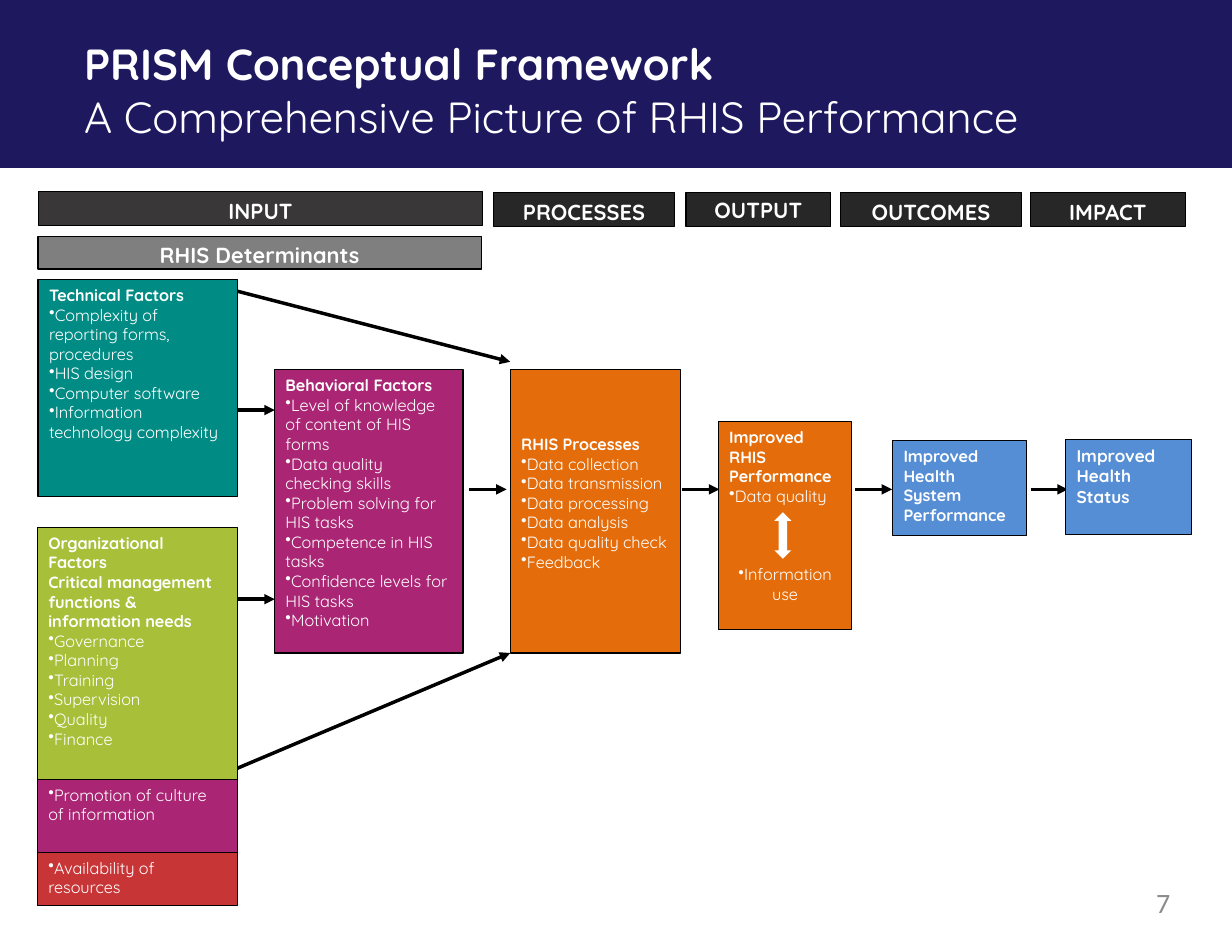
from lxml import etree
from pptx import Presentation
from pptx.dml.color import RGBColor
from pptx.enum import shapes, text
from pptx.oxml.ns import qn
from pptx.util import Pt

FONT = "Quicksand"
WHITE, BLACK, NAVY = "FFFFFF", "000000", "1E185F"
TEAL, MAGENTA, ORANGE = "008C84", "AA2573", "E46C0A"
BLUE, GREEN, RED = "558ED5", "A7BF39", "C83537"
LEFT, CENTER, RIGHT = text.PP_ALIGN.LEFT, text.PP_ALIGN.CENTER, text.PP_ALIGN.RIGHT


def color(value):
    return RGBColor.from_string(value)


def style(p, size, bold=False, fill=WHITE, font=FONT, align=LEFT):
    p.alignment = align
    p.font.size, p.font.name, p.font.bold = Pt(size), font, bold
    p.font.color.rgb = color(fill)


def add_bullet(p):
    pPr = p._p.get_or_add_pPr()
    pPr.set("marL", "0")
    pPr.set("indent", "0")
    bullet = etree.Element(qn("a:buChar"), char="•")
    pPr.insert_element_before(bullet, "a:tabLst", "a:defRPr", "a:extLst")


def add_block(s, box, fill, line=BLACK, kind=shapes.MSO_SHAPE.RECTANGLE):
    sp = s.shapes.add_shape(kind, *map(Pt, box))
    sp.shadow.inherit = False
    sp.fill.solid()
    sp.fill.fore_color.rgb = color(fill)
    if line:
        sp.line.color.rgb = color(line)
        sp.line.width = Pt(0.75)
    else:
        sp.line.fill.background()
    sp.text_frame.word_wrap = True
    sp.text_frame.vertical_anchor = text.MSO_ANCHOR.TOP
    return sp


def add_plain_text(s, box, lines, size, **look):
    tf = s.shapes.add_textbox(*map(Pt, box)).text_frame
    tf.word_wrap = True
    tf.margin_left = tf.margin_right = tf.margin_top = tf.margin_bottom = 0
    for i, (line, bold) in enumerate(lines):
        p = tf.paragraphs[0] if i == 0 else tf.add_paragraph()
        p.text = line
        style(p, size, bold, **look)


def add_header(s, box, label, fill="272727"):
    tf = add_block(s, box, fill).text_frame
    tf.text = label
    style(tf.paragraphs[0], 14, True, align=CENTER)
    return tf


def add_factor_box(s, box, fill, headings, items=(), size=10.5):
    """Filled box with bold headings above bulleted items."""
    tf = add_block(s, box, fill).text_frame
    for i, line in enumerate([*headings, *items]):
        p = tf.paragraphs[0] if i == 0 else tf.add_paragraph()
        p.text = line
        heading = i < len(headings)
        style(p, size, heading)
        if not heading:
            add_bullet(p)
    return tf


def add_arrow(s, x1, y1, x2, y2):
    c = s.shapes.add_connector(shapes.MSO_CONNECTOR.STRAIGHT, *map(Pt, (x1, y1, x2, y2)))
    c.line.color.rgb = color(BLACK)
    c.line.width = Pt(2.25)
    etree.SubElement(c.line._get_or_add_ln(), qn("a:tailEnd"), type="triangle")
    etree.SubElement(c._element.spPr, qn("a:effectLst"))


def title_band(s, box):
    left, top, width, height = box
    add_block(s, box, NAVY, line=None)
    add_plain_text(s, (left + 54, top + 24, 660, 68),
                   [("PRISM Conceptual Framework", True),
                    ("A Comprehensive Picture of RHIS Performance", False)], 28)


def stage_headers(s, left, top):
    add_header(s, (left, top - 0.7, 285, 21.6), "INPUT", "393737")
    add_header(s, (left - 0.5, top + 28, 285, 21), "RHIS Determinants", "7F7F7F")
    for x, width, label in [(292.5, 116, "PROCESSES"), (416, 93, "OUTPUT"),
                            (515.5, 116, "OUTCOMES"), (637.5, 99.5, "IMPACT")]:
        tf = add_header(s, (left + x, top, width, 21.6), label)
        if label == "OUTPUT":
            tf.vertical_anchor = text.MSO_ANCHOR.MIDDLE


def determinants(s, left, top):
    add_factor_box(s, (left + 0.5, top, 128, 139.5), TEAL, ["Technical Factors"],
                   ["Complexity of reporting forms, procedures", "HIS design",
                    "Computer software", "Information technology complexity"])
    add_factor_box(s, (left, top + 159.3, 128.8, 162), GREEN,
                   ["Organizational Factors",
                    "Critical management functions & information needs"],
                   ["Governance", "Planning", "Training", "Supervision", "Quality", "Finance"])
    add_factor_box(s, (left, top + 321.3, 128.8, 46.8), MAGENTA, [],
                   ["Promotion of culture of information"])
    add_factor_box(s, (left, top + 368.1, 128.8, 34), RED, [], ["Availability of resources"])
    add_factor_box(s, (left + 152.4, top + 58, 121.3, 182), MAGENTA, ["Behavioral Factors"],
                   ["Level of knowledge of content of HIS forms",
                    "Data quality checking skills", "Problem solving for HIS tasks",
                    "Competence in HIS tasks", "Confidence levels for HIS tasks",
                    "Motivation"])


def results_chain(s, left, top):
    tf = add_factor_box(s, (left, top, 109.5, 182), ORANGE, ["RHIS Processes"],
                        ["Data collection", "Data transmission", "Data processing",
                         "Data analysis", "Data quality check", "Feedback"])
    tf.margin_top = Pt(41.4)

    # Output box leaves a gap for the two-way arrow
    tf = add_factor_box(s, (left + 133.7, top + 33.4, 86, 133.7), ORANGE,
                        ["Improved RHIS Performance"], ["Data quality", "Information use"])
    last = tf.paragraphs[-1]
    last.alignment = CENTER
    last.space_before = Pt(37.8)
    add_block(s, (left + 169.8, top + 91.5, 11, 30), WHITE, None,
              shapes.MSO_SHAPE.UP_DOWN_ARROW)

    add_factor_box(s, (left + 245.8, top + 45.5, 86.4, 61), BLUE,
                   ["Improved Health System Performance"])
    add_factor_box(s, (left + 357, top + 44.7, 81, 61), BLUE,
                   ["Improved Health Status"], size=11)


def flow_arrows(s):
    # Short horizontal steps
    for x, y in [(152.6, 263.6), (152.6, 385.2), (301.7, 314.6),
                 (438.5, 314.6), (549.5, 314.6), (662.5, 314.6)]:
        add_arrow(s, x, y, x + 24, y)
    # Direct links from the factors to the processes
    add_arrow(s, 152.6, 187.2, 328, 232.6)
    add_arrow(s, 152.6, 493.9, 328, 419.8)


def main():
    prs = Presentation()
    prs.slide_width, prs.slide_height = Pt(792), Pt(612)
    s = prs.slides.add_slide(prs.slide_layouts[6])
    title_band(s, (0, 0, 792, 108))
    stage_headers(s, 25, 124)
    flow_arrows(s)
    determinants(s, 24, 179.8)
    results_chain(s, 328, 237.8)
    # Page number
    add_plain_text(s, (570, 569.5, 182.4, 30), [("7", False)], 18,
                   fill="8C8C8C", font="Calibri", align=RIGHT)
    prs.save("out.pptx")


if __name__ == "__main__":
    main()
